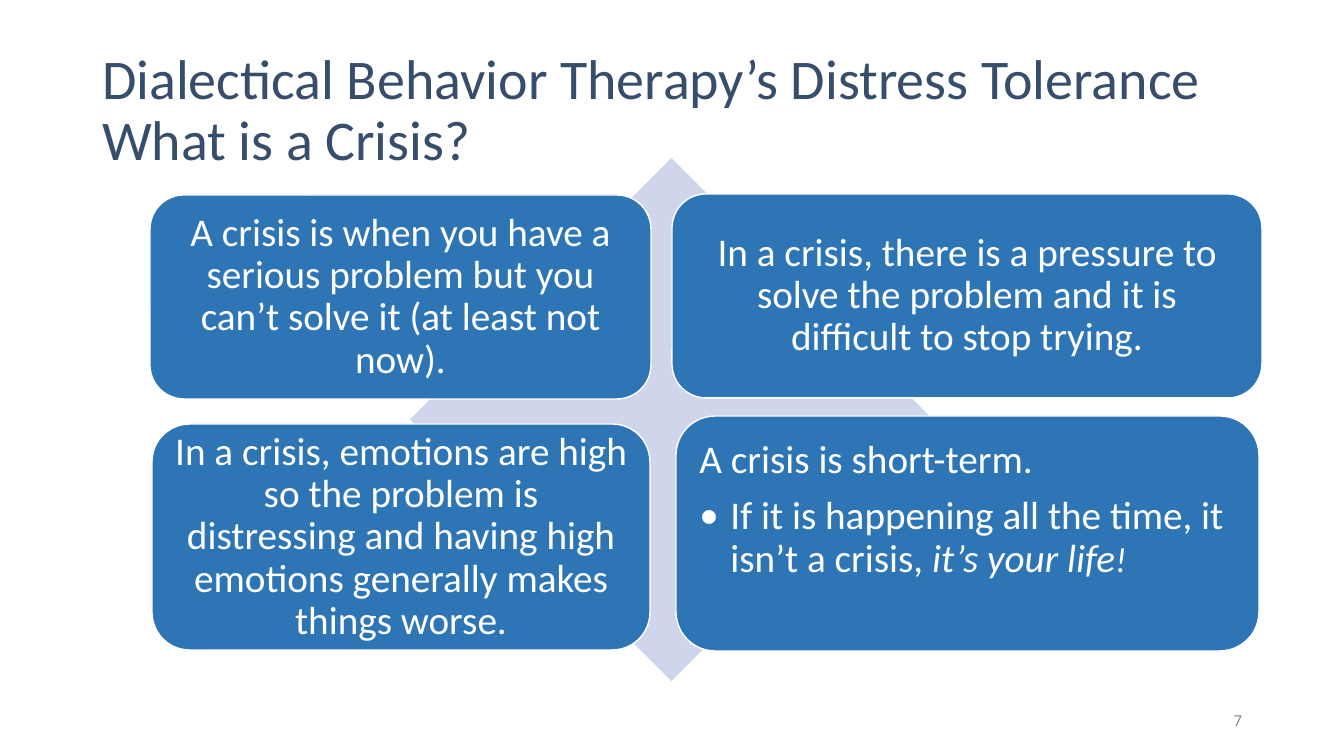
from lxml.etree import SubElement
from pptx import Presentation
from pptx.dml.color import RGBColor
from pptx.enum.shapes import MSO_SHAPE
from pptx.enum.text import MSO_ANCHOR, MSO_AUTO_SIZE, PP_ALIGN
from pptx.oxml.ns import qn
from pptx.util import Emu, Pt

PX = 12192000 / 1344
FONT = "Calibri"
NAVY, BLUE, LAVENDER, GRAY, WHITE = "374D6C", "2E75B6", "CFD5EA", "8C8C8C", "FFFFFF"

TITLE = "Dialectical Behavior Therapy’s Distress Tolerance\vWhat is a Crisis?"
TITLE_BOX = (92, 39, 1160, 146)
DIAMOND_BOX = (410, 158, 523, 523)
CARD_MARGIN = 12
CENTERED_CARDS = [
    ((150, 195, 501, 204),
     "A crisis is when you have a serious problem but you can’t solve it (at least not now)."),
    ((672, 194, 590, 204),
     "In a crisis, there is a pressure to solve the problem and it is difficult to stop trying."),
    ((152, 424, 498, 226),
     "In a crisis, emotions are high so the problem is distressing and having high emotions "
     "generally makes things worse."),
]
LIST_CARD_BOX = (676, 416, 583, 235)
LIST_HEADING = "A crisis is short-term."
BULLET_RUNS = [  # text, italic, size
    ("If it is happening all the time, it isn’t a crisis, ", False, 28),
    ("it’s your life", True, 28),
    ("!", True, 25),
]
NUMBER_BOX = (950, 700, 302, 40)
SLIDE_NUMBER = "7"


def px(length):
    return Emu(round(length * PX))


def color(hex_string):
    return RGBColor.from_string(hex_string)


def style(paragraph, size, hex_string, align=PP_ALIGN.LEFT, spacing=0.9):
    paragraph.alignment = align
    paragraph.line_spacing = spacing
    paragraph.font.name = FONT
    paragraph.font.size = Pt(size)
    paragraph.font.color.rgb = color(hex_string)


def add_filled(slide, kind, box, fill):
    shape = slide.shapes.add_shape(kind, *map(px, box))
    shape.shadow.inherit = False
    shape.fill.solid()
    shape.fill.fore_color.rgb = color(fill)
    shape.line.fill.background()
    return shape


def add_card(slide, box, text, align, anchor):
    """Add a rounded card with one paragraph and return its text frame."""
    card = add_filled(slide, MSO_SHAPE.ROUNDED_RECTANGLE, box, BLUE)
    card.line.color.rgb = color(WHITE)
    card.line.width = Pt(1)
    frame = card.text_frame
    frame.word_wrap = True
    frame.vertical_anchor = anchor
    frame.margin_left = frame.margin_right = px(CARD_MARGIN)
    frame.margin_top = frame.margin_bottom = px(CARD_MARGIN)
    frame.text = text
    style(frame.paragraphs[0], 28, WHITE, align)
    return frame


def add_bullet(frame, runs, indent):
    paragraph = frame.add_paragraph()
    style(paragraph, 28, WHITE)
    for text, italic, size in runs:
        run = paragraph.add_run()
        run.text = text
        run.font.italic = italic
        run.font.size = Pt(size)
    properties = paragraph._p.get_or_add_pPr()
    properties.set("marL", str(indent))
    properties.set("indent", str(-indent))
    defaults = properties.find(qn("a:defRPr"))
    for tag, name, value in (("a:buFont", "typeface", FONT), ("a:buChar", "char", "•")):
        element = SubElement(properties, qn(tag))
        element.set(name, value)
        defaults.addprevious(element)


def main():
    presentation = Presentation()
    presentation.slide_width, presentation.slide_height = px(1344), px(756)
    slide = presentation.slides.add_slide(presentation.slide_layouts[5])

    title = slide.shapes.title
    title.left, title.top, title.width, title.height = map(px, TITLE_BOX)
    title.text_frame.text = TITLE
    title.text_frame.word_wrap = True
    title.text_frame.auto_size = MSO_AUTO_SIZE.NONE
    title.text_frame.vertical_anchor = MSO_ANCHOR.MIDDLE
    style(title.text_frame.paragraphs[0], 40, NAVY)

    add_filled(slide, MSO_SHAPE.DIAMOND, DIAMOND_BOX, LAVENDER)
    for box, text in CENTERED_CARDS:
        add_card(slide, box, text, PP_ALIGN.CENTER, MSO_ANCHOR.MIDDLE)
    frame = add_card(slide, LIST_CARD_BOX, LIST_HEADING, PP_ALIGN.LEFT, MSO_ANCHOR.TOP)
    frame.paragraphs[0].space_after = Pt(10)
    add_bullet(frame, BULLET_RUNS, px(31))

    number = slide.shapes.add_textbox(*map(px, NUMBER_BOX)).text_frame
    number.word_wrap = True
    number.vertical_anchor = MSO_ANCHOR.MIDDLE
    number.text = SLIDE_NUMBER
    style(number.paragraphs[0], 12, GRAY, PP_ALIGN.RIGHT, 1.0)

    presentation.save("out.pptx")


if __name__ == "__main__":
    main()
